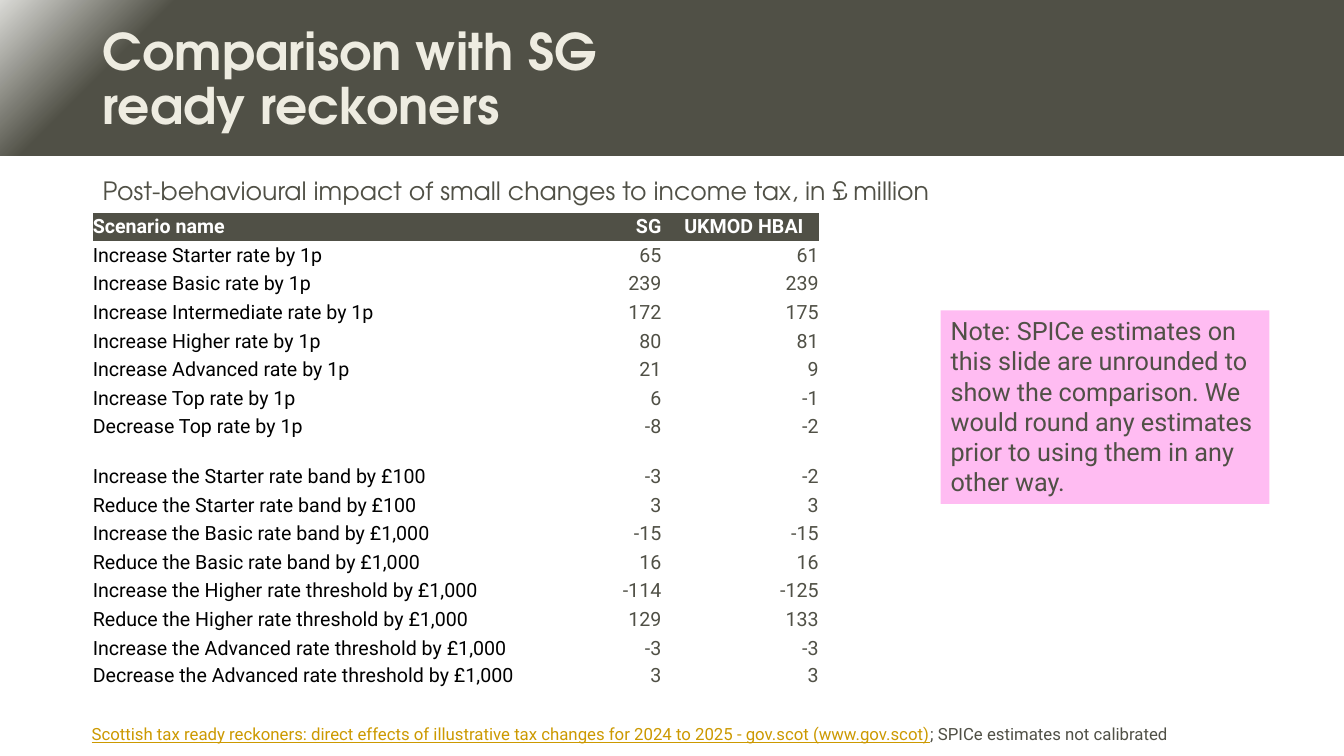
from dataclasses import dataclass

from pptx import Presentation
from pptx.dml.color import RGBColor
from pptx.enum import shapes, text
from pptx.oxml import parse_xml
from pptx.oxml.ns import nsdecls, qn
from pptx.util import Inches, Pt

COLORS = {
    "olive": "505046", "pale": "DDDDD9", "cream": "EEECE1", "white": "FFFFFF",
    "black": "000000", "gold": "CC9900", "pink": "FFBCF2",
}
BODY_FONT = "Roboto"
HEADING_FONT = "TeX Gyre Adventor"
NO_GRID_STYLE = "{2D5ABB26-0587-4C30-8999-92F81FD0307C}"

COLUMN_WIDTHS = (4.54, 1.1, 1.56)
TABLE_HEIGHT, GAP_ROW_HEIGHT, LAST_ROW_HEIGHT = 4.74, 0.49, 0.27


@dataclass
class Scenario:
    name: str
    sg: int
    ukmod: int
    starts_group: bool = False


SCENARIOS = [
    Scenario("Increase Starter rate by 1p", 65, 61),
    Scenario("Increase Basic rate by 1p", 239, 239),
    Scenario("Increase Intermediate rate by 1p", 172, 175),
    Scenario("Increase Higher rate by 1p", 80, 81),
    Scenario("Increase Advanced rate by 1p", 21, 9),
    Scenario("Increase Top rate by 1p", 6, -1),
    Scenario("Decrease Top rate by 1p", -8, -2),
    Scenario("Increase the Starter rate band by £100", -3, -2, starts_group=True),
    Scenario("Reduce the Starter rate band by £100", 3, 3),
    Scenario("Increase the Basic rate band by £1,000", -15, -15),
    Scenario("Reduce the Basic rate band by £1,000", 16, 16),
    Scenario("Increase the Higher rate threshold by £1,000", -114, -125),
    Scenario("Reduce the Higher rate threshold by £1,000", 129, 133),
    Scenario("Increase the Advanced rate threshold by £1,000", -3, -3),
    Scenario("Decrease the Advanced rate threshold by £1,000", 3, 3),
]


def rgb(name: str) -> RGBColor:
    return RGBColor.from_string(COLORS[name])


def set_font(font, size: float, color: str, name: str = BODY_FONT, bold: bool = False) -> None:
    font.name, font.size, font.bold = name, Pt(size), bold
    font.color.rgb = rgb(color)


def add_rectangle(slide, left: float, top: float, width: float, height: float, color: str):
    rectangle = slide.shapes.add_shape(
        shapes.MSO_SHAPE.RECTANGLE, Inches(left), Inches(top), Inches(width), Inches(height))
    rectangle.shadow.inherit = False
    rectangle.fill.solid()
    rectangle.fill.fore_color.rgb = rgb(color)
    rectangle.line.fill.background()
    return rectangle


def add_text_box(slide, left: float, top: float, width: float, height: float):
    """Add a wrapping text box and return its first paragraph."""
    box = slide.shapes.add_textbox(Inches(left), Inches(top), Inches(width), Inches(height))
    box.text_frame.word_wrap = True
    return box.text_frame.paragraphs[0]


def add_header_band(slide) -> None:
    """Draw the band behind the title, lit from its top left corner."""
    band = add_rectangle(slide, 0, -0.03, 13.33, 1.57, "olive")
    stops = "".join(
        f'<a:gs pos="{position * 1000}"><a:srgbClr val="{COLORS[color]}"/></a:gs>'
        for position, color in ((0, "olive"), (50, "olive"), (88, "olive"), (100, "pale")))
    gradient = parse_xml(
        f'<a:gradFill {nsdecls("a")} rotWithShape="1"><a:gsLst>{stops}</a:gsLst>'
        '<a:path path="circle"><a:fillToRect l="100000" t="100000"/></a:path></a:gradFill>')
    properties = band._element.spPr
    properties.replace(properties.find(qn("a:solidFill")), gradient)
    slide.shapes._spTree.insert(2, band._element)


def add_title(slide) -> None:
    title = slide.shapes.title
    title.left, title.top = Inches(0.92), Inches(0.12)
    title.width, title.height = Inches(6.46), Inches(1.37)
    frame = title.text_frame
    frame.text = "Comparison with SG ready reckoners"
    frame.word_wrap = True
    frame.auto_size = text.MSO_AUTO_SIZE.NONE
    frame.vertical_anchor = text.MSO_ANCHOR.MIDDLE
    paragraph = frame.paragraphs[0]
    paragraph.alignment = text.PP_ALIGN.LEFT
    paragraph.line_spacing = 0.9
    set_font(paragraph.font, 36, "cream", HEADING_FONT, bold=True)


def fill_cell(cell, content: str, color: str, fill: str, is_header: bool, is_number: bool) -> None:
    cell.margin_left = cell.margin_right = cell.margin_top = 0
    cell.margin_bottom = Inches(0.03)
    cell.vertical_anchor = text.MSO_ANCHOR.BOTTOM
    cell.fill.solid()
    cell.fill.fore_color.rgb = rgb(fill)
    cell.text = content
    paragraph = cell.text_frame.paragraphs[0]
    if is_number:
        paragraph.alignment = text.PP_ALIGN.RIGHT
        if not is_header:
            paragraph.space_after = Pt(6)
    set_font(paragraph.font, 14, color, bold=is_header)


def add_scenario_table(slide) -> None:
    frame = slide.shapes.add_table(
        len(SCENARIOS) + 1, len(COLUMN_WIDTHS), Inches(0.92), Inches(2.11),
        Inches(sum(COLUMN_WIDTHS)), Inches(TABLE_HEIGHT))
    table = frame.table
    table.first_row = table.horz_banding = False
    table._tbl.tblPr.find(qn("a:tableStyleId")).text = NO_GRID_STYLE
    for column, width in zip(table.columns, COLUMN_WIDTHS):
        column.width = Inches(width)

    regular_height = (TABLE_HEIGHT - GAP_ROW_HEIGHT - LAST_ROW_HEIGHT) / (len(SCENARIOS) - 1)
    for row in table.rows:
        row.height = Inches(regular_height)
    table.rows[len(SCENARIOS)].height = Inches(LAST_ROW_HEIGHT)

    for index, heading in enumerate(("Scenario name", "SG", "UKMOD HBAI")):
        fill_cell(table.cell(0, index), heading, "white", "olive", True, index > 0)
    table.cell(0, 2).margin_right = Inches(0.15)

    for row_index, scenario in enumerate(SCENARIOS, start=1):
        if scenario.starts_group:
            table.rows[row_index].height = Inches(GAP_ROW_HEIGHT)
        for index, value in enumerate((scenario.name, scenario.sg, scenario.ukmod)):
            color = "olive" if index else "black"
            fill_cell(table.cell(row_index, index), str(value), color, "white", False, index > 0)


def add_subtitle(slide) -> None:
    paragraph = add_text_box(slide, 0.92, 1.69, 9.74, 0.4)
    paragraph.text = "Post-behavioural impact of small changes to income tax, in £ million"
    set_font(paragraph.font, 18, "olive", HEADING_FONT)


def add_source_line(slide) -> None:
    paragraph = add_text_box(slide, 0.81, 7.13, 12.31, 0.3)
    link = paragraph.add_run()
    link.text = ("Scottish tax ready reckoners: direct effects of illustrative tax changes "
                 "for 2024 to 2025 - gov.scot (www.gov.scot)")
    set_font(link.font, 12, "gold")
    link.font.underline = True
    remark = paragraph.add_run()
    remark.text = "; SPICe estimates not calibrated"
    set_font(remark.font, 12, "olive")


def add_note(slide) -> None:
    note = add_rectangle(slide, 9.33, 3.08, 3.26, 1.92, "pink")
    frame = note.text_frame
    frame.word_wrap = True
    frame.vertical_anchor = text.MSO_ANCHOR.TOP
    frame.text = ("Note: SPICe estimates on this slide are unrounded to show the comparison. "
                  "We would round any estimates prior to using them in any other way.")
    frame.paragraphs[0].alignment = text.PP_ALIGN.LEFT
    set_font(frame.paragraphs[0].font, 18, "olive")


def main() -> None:
    presentation = Presentation()
    presentation.slide_width, presentation.slide_height = Inches(13.33), Inches(7.5)
    slide = presentation.slides.add_slide(presentation.slide_layouts.get_by_name("Title Only"))
    add_header_band(slide)
    add_title(slide)
    add_scenario_table(slide)
    add_subtitle(slide)
    add_source_line(slide)
    add_note(slide)
    presentation.save("out.pptx")


if __name__ == "__main__":
    main()
